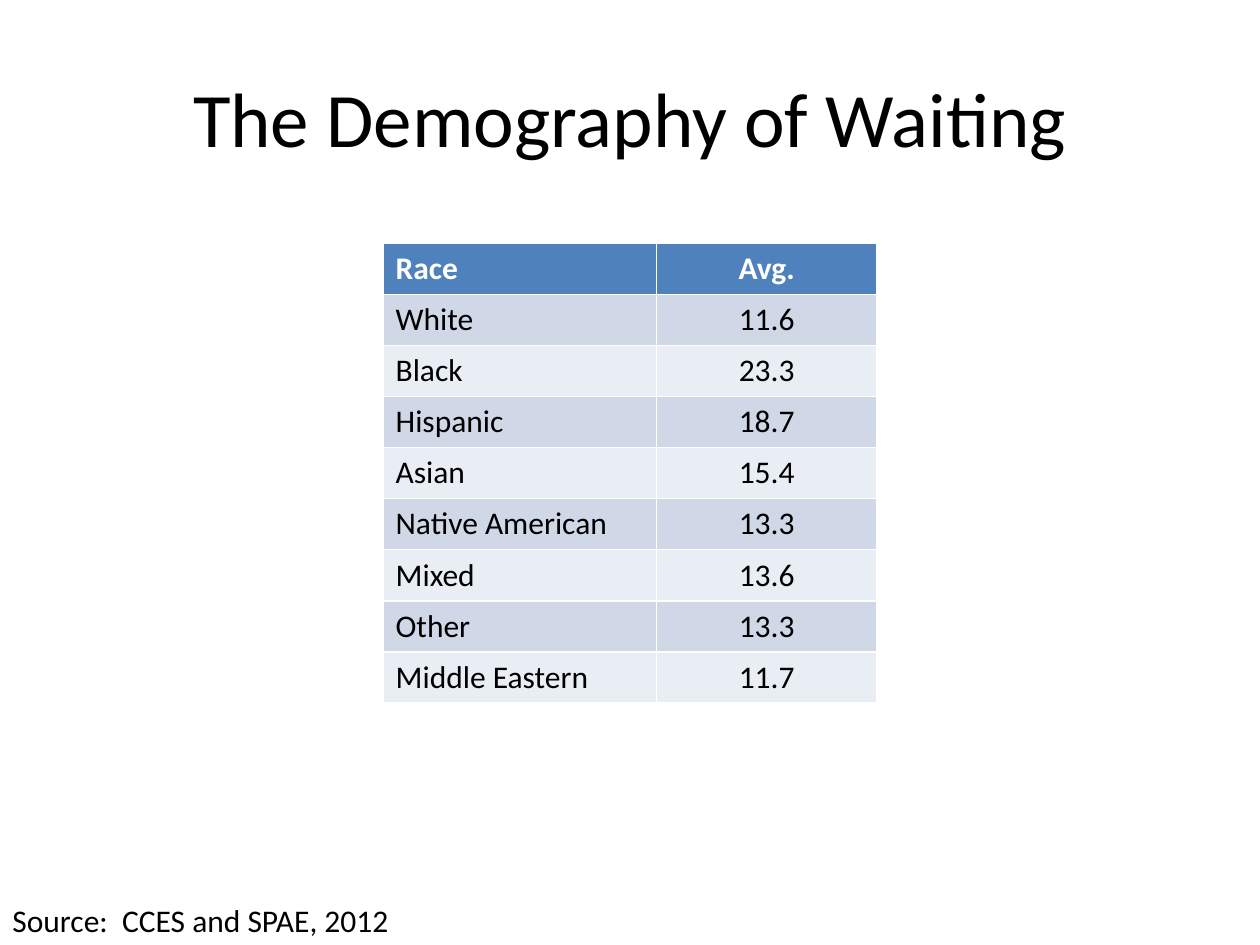
from dataclasses import dataclass

from pptx import Presentation
from pptx.dml.color import RGBColor as RGB
from pptx.enum.text import MSO_ANCHOR as Anchor, MSO_AUTO_SIZE as AutoSize, PP_ALIGN as Align
from pptx.util import Inches, Pt


@dataclass(frozen=True)
class Theme:
    font: str = "Calibri"
    title_size: int = 44
    text_size: int = 18
    ink: str = "000000"
    header_ink: str = "FFFFFF"
    header_fill: str = "4F81BD"
    bands: tuple = ("D0D8E8", "E9EDF4")


theme = Theme()


def set_text(frame, text, size, color=theme.ink, align=Align.LEFT, bold=False):
    frame.text = text
    paragraph = frame.paragraphs[0]
    paragraph.alignment = align
    font = paragraph.runs[0].font
    font.name, font.size, font.bold = theme.font, Pt(size), bold
    font.color.rgb = RGB.from_string(color)


waits_by_race = [
    ("Race", "Avg."),
    ("White", "11.6"),
    ("Black", "23.3"),
    ("Hispanic", "18.7"),
    ("Asian", "15.4"),
    ("Native American", "13.3"),
    ("Mixed", "13.6"),
    ("Other", "13.3"),
    ("Middle Eastern", "11.7"),
]
column_widths = (Inches(2.17), Inches(1.75))
column_aligns = (Align.LEFT, Align.CENTER)

prs = Presentation()
prs.slide_width, prs.slide_height = Inches(10), Inches(7.5)
slide = prs.slides.add_slide(prs.slide_layouts[5])

# Title
heading = slide.shapes.title
heading.left, heading.top = int(prs.slide_width * 0.05), int(prs.slide_height * 0.04)
heading.width, heading.height = int(prs.slide_width * 0.9), Inches(1.25)
heading.text_frame.vertical_anchor = Anchor.MIDDLE
set_text(heading.text_frame, "The Demography of Waiting", theme.title_size, align=Align.CENTER)

# Average waits, centred across the slide
table_width = sum(column_widths)
waits = slide.shapes.add_table(
    len(waits_by_race), len(column_widths),
    (prs.slide_width - table_width) // 2, Inches(1.93), table_width, Inches(3.65),
).table
for column, width in zip(waits.columns, column_widths):
    column.width = width

for r, record in enumerate(waits_by_race):
    is_header = r == 0
    fill = theme.header_fill if is_header else theme.bands[(r - 1) % 2]
    ink = theme.header_ink if is_header else theme.ink
    for c, value in enumerate(record):
        cell = waits.cell(r, c)
        cell.fill.solid()
        cell.fill.fore_color.rgb = RGB.from_string(fill)
        set_text(cell.text_frame, value, theme.text_size, ink, column_aligns[c], is_header)

# Source line on the bottom edge
source_height = Inches(0.4)
source = slide.shapes.add_textbox(
    0, prs.slide_height - source_height, Inches(3.22), source_height
).text_frame
source.word_wrap = False
source.auto_size = AutoSize.SHAPE_TO_FIT_TEXT
set_text(source, "Source:  CCES and SPAE, 2012", theme.text_size)

prs.save("out.pptx")
